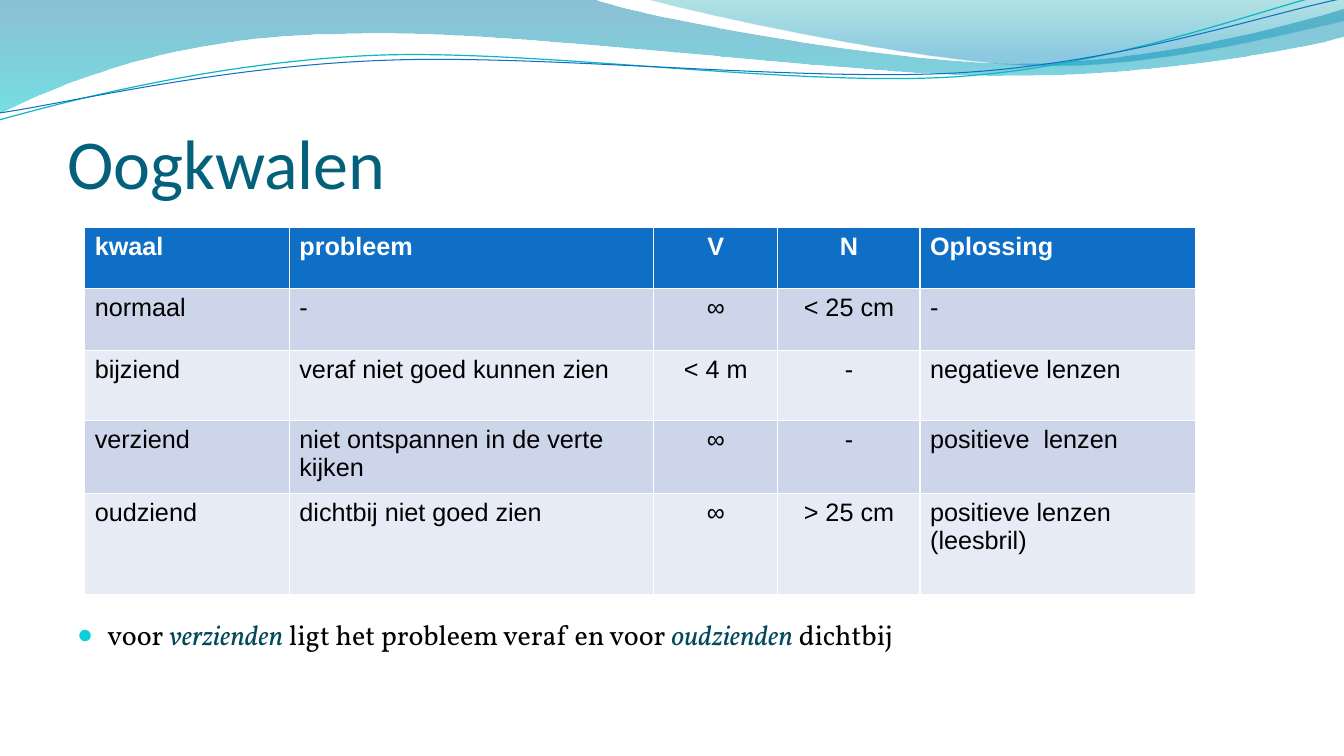
"""Build the slide about eye conditions, with lengths as percentages of the slide's size."""
from dataclasses import dataclass

from lxml import etree
from pptx import Presentation, util as u
from pptx.dml.color import RGBColor
from pptx.enum import text
from pptx.oxml import ns

WIDTH, HEIGHT = u.Inches(13.33), u.Inches(7.5)
COLOURS = {
    "title": "04617B", "term": "03495C", "bullet": "0BD0D9", "text": "000000",
    "white": "FFFFFF", "header": "0F6FC6", "odd": "CCD5EA", "even": "E7EBF5",
    "teal line": "0AB8BF", "blue line": "0F6FC6",
    "deep blue": "0074A1", "cyan": "00C6CF", "green": "00A1A9", "sky": "008BBF",
}


@dataclass
class Stop:
    position: float
    colour: str
    opacity: int


@dataclass
class Wave:
    """An outline whose segments hold one point (straight) or three (cubic curve)."""
    start: tuple
    segments: list
    stops: tuple = ()
    line: str = ""
    line_width: float = 0


@dataclass
class Column:
    width: float
    centred: bool
    cells: tuple


WAVES = [
    Wave((0, -0.13), [
        [(44.04, -0.13)],
        [(47.56, 2.27), (66.39, 8.4), (75.84, 8.4)],
        [(85.37, 8.4), (95.87, 3.47), (100, 1.2)],
        [(100.15, 4.8)],
        [(98.35, 5.87), (87.02, 10.13), (74.57, 10)],
        [(62.19, 10), (38.18, 3.73), (25.73, 4.53)],
        [(12.9, 4.67), (4.58, 11.07), (-0.08, 15.07)],
    ], stops=(Stop(0, "deep blue", 45), Stop(1, "cyan", 55))),
    Wave((47.94, -0.13), [
        [(50.94, 1.47), (68.19, 8.27), (76.89, 8.67)],
        [(85.6, 9.2), (96.17, 4.27), (100, 2.8)],
        [(100, 0)],
    ], stops=(Stop(0, "green", 30), Stop(0.8, "sky", 45))),
    Wave((-0.08, 15.87), [
        [(4.8, 13.47), (15.83, 8.27), (27.68, 7.33)],
        [(39.53, 6.4), (59.26, 11.6), (71.27, 10.13)],
        [(83.27, 8.67), (93.92, 1.07), (99.85, -1.33)],
    ], line="teal line", line_width=0.85),
    Wave((0, 14.93), [
        [(4.73, 13.73), (16.35, 8.8), (28.36, 8)],
        [(40.29, 7.07), (59.71, 10.93), (71.64, 9.6)],
        [(83.65, 8.27), (94.15, 1.87), (100.08, -0.27)],
    ], line="blue line", line_width=0.75),
]

COLUMNS = [
    Column(15.23, False, ("kwaal", "normaal", "bijziend", "verziend", "oudziend")),
    Column(27.12, False, ("probleem", "-", "veraf niet goed kunnen zien",
                          "niet ontspannen in de verte kijken", "dichtbij niet goed zien")),
    Column(9.23, True, ("V", "∞", "< 4 m", "∞", "∞")),
    Column(10.58, True, ("N", "< 25 cm", "-", "-", "> 25 cm")),
    Column(20.53, False, ("Oplossing", "-", "negatieve lenzen", "positieve  lenzen",
                          "positieve lenzen (leesbril)")),
]
ROW_HEIGHTS = (8.13, 8.13, 9.33, 9.67, 13.33)
REMARK = (("voor ", False), ("verzienden", True), (" ligt het probleem veraf en voor ", False),
          ("oudzienden", True), (" dichtbij", False))


def across(percent: float) -> int:
    return round(WIDTH * percent / 100)


def down(percent: float) -> int:
    return round(HEIGHT * percent / 100)


def colour(name: str) -> RGBColor:
    return RGBColor.from_string(COLOURS[name])


def add_element(parent, tag: str, **attributes: str):
    return etree.SubElement(parent, ns.qn(tag), attributes)


def set_font(font, name: str, size: float, colour_name: str) -> None:
    font.name, font.size = name, u.Pt(size)
    font.color.rgb = colour(colour_name)


def bend_curves(shape, wave: Wave) -> None:
    """Turn each run of three straight steps that belongs to a curve into one cubic step."""
    steps = iter(list(shape.element.spPr.iter(ns.qn("a:lnTo"))))
    for segment in wave.segments:
        first, *others = [next(steps) for _ in segment]
        if others:
            first.tag = ns.qn("a:cubicBezTo")
        for step in others:
            first.append(step[0])
            step.getparent().remove(step)


def draw_wave(slide, wave: Wave) -> None:
    builder = slide.shapes.build_freeform(across(wave.start[0]), down(wave.start[1]))
    points = [(across(x), down(y)) for segment in wave.segments for x, y in segment]
    builder.add_line_segments(points, close=False)
    shape = builder.convert_to_shape()
    bend_curves(shape, wave)
    shape.shadow.inherit = False
    if not wave.stops:
        shape.fill.background()
        shape.line.color.rgb = colour(wave.line)
        shape.line.width = u.Pt(wave.line_width)
        return
    add_element(next(shape.element.spPr.iter(ns.qn("a:path"))), "a:close")
    shape.line.fill.background()
    shape.fill.gradient()
    shape.fill.gradient_angle = 270
    for target, stop in zip(shape.fill.gradient_stops, wave.stops):
        target.position = stop.position
        target.color.rgb = colour(stop.colour)
    stop_colours = shape.element.spPr.iter(ns.qn("a:srgbClr"))
    for element, stop in zip(list(stop_colours), wave.stops):
        add_element(element, "a:alpha", val=str(stop.opacity * 1000))


def add_title(slide) -> None:
    box = slide.shapes.add_textbox(across(5), down(10.27), across(90), down(16.67))
    frame = box.text_frame
    frame.text, frame.word_wrap = "Oogkwalen", True
    frame.vertical_anchor = text.MSO_ANCHOR.BOTTOM
    frame.margin_left = frame.margin_right = frame.margin_bottom = 0
    set_font(frame.paragraphs[0].runs[0].font, "Calibri", 50, "title")


def add_conditions_table(slide) -> None:
    table = slide.shapes.add_table(
        len(ROW_HEIGHTS), len(COLUMNS), across(6.3), down(30.07),
        across(sum(column.width for column in COLUMNS)), down(sum(ROW_HEIGHTS))).table
    for row, height in zip(table.rows, ROW_HEIGHTS):
        row.height = down(height)
    for column_index, column in enumerate(COLUMNS):
        table.columns[column_index].width = across(column.width)
        for row_index, wording in enumerate(column.cells):
            is_header = row_index == 0
            cell = table.cell(row_index, column_index)
            cell.text = wording
            cell.fill.solid()
            cell.fill.fore_color.rgb = colour(
                "header" if is_header else "odd" if row_index % 2 else "even")
            paragraph = cell.text_frame.paragraphs[0]
            if column.centred:
                paragraph.alignment = text.PP_ALIGN.CENTER
            font = paragraph.runs[0].font
            set_font(font, "Arial", 18, "white" if is_header else "text")
            font.bold = is_header


def add_remark(slide) -> None:
    box = slide.shapes.add_textbox(across(5), down(28.27), across(90), down(64))
    frame = box.text_frame
    frame.word_wrap = True
    frame.vertical_anchor = text.MSO_ANCHOR.BOTTOM
    frame.margin_bottom = down(6.13)
    paragraph = frame.paragraphs[0]
    properties = paragraph._p.get_or_add_pPr()
    indent = u.Inches(0.3)
    properties.set("marL", str(indent))
    properties.set("indent", str(-indent))
    add_element(add_element(properties, "a:buClr"), "a:srgbClr", val=COLOURS["bullet"])
    add_element(properties, "a:buSzPct", val="95000")
    add_element(properties, "a:buFont", typeface="Arial")
    add_element(properties, "a:buChar", char="●")
    for wording, is_term in REMARK:
        run = paragraph.add_run()
        run.text = wording
        set_font(run.font, "Vollkorn", 20, "term" if is_term else "text")
        run.font.italic = is_term


def main() -> None:
    presentation = Presentation()
    presentation.slide_width, presentation.slide_height = WIDTH, HEIGHT
    slide = presentation.slides.add_slide(presentation.slide_layouts[6])
    for wave in WAVES:
        draw_wave(slide, wave)
    add_title(slide)
    add_conditions_table(slide)
    add_remark(slide)
    presentation.save("out.pptx")


if __name__ == "__main__":
    main()
